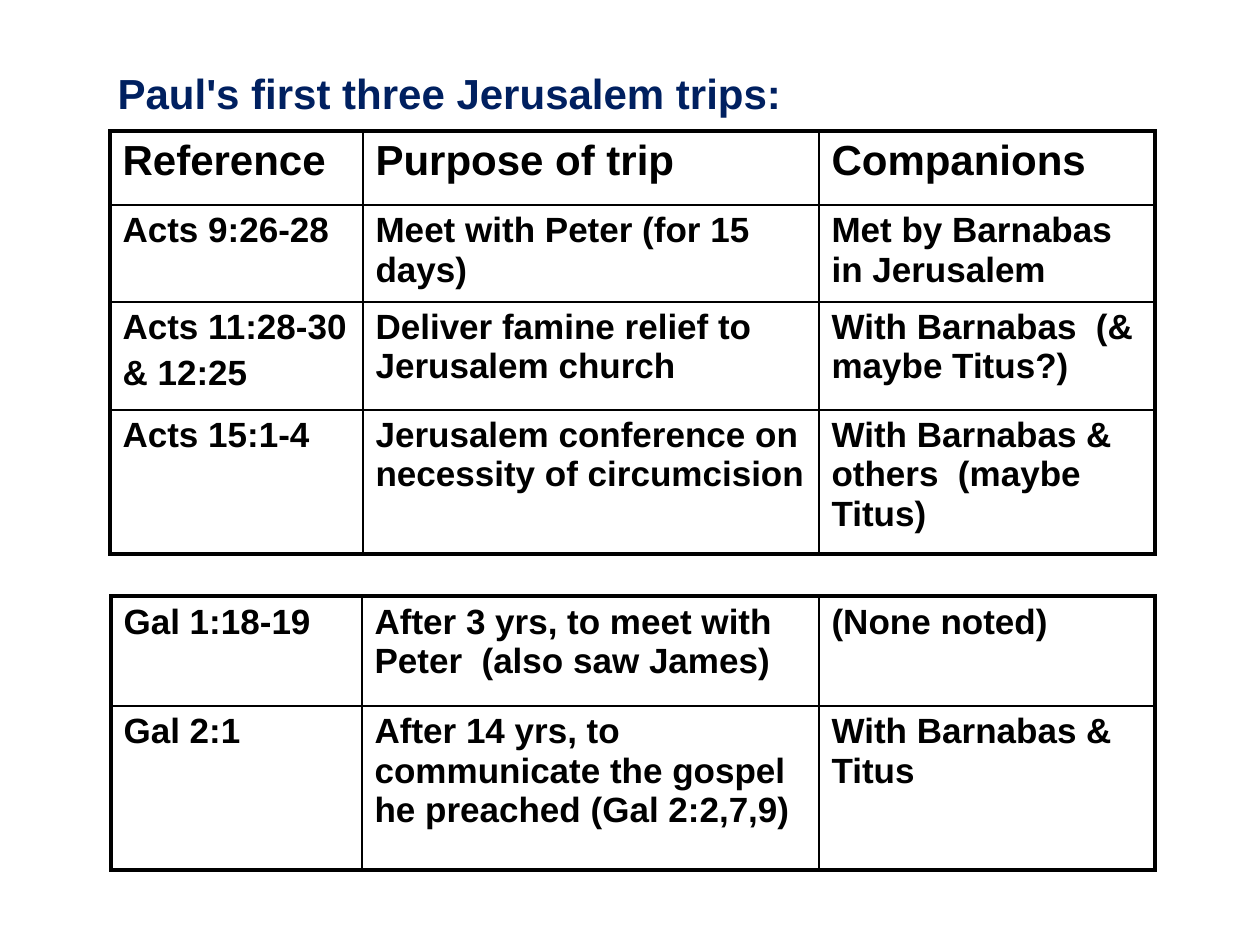
from lxml.etree import SubElement
from pptx import Presentation
from pptx.dml.color import RGBColor
from pptx.enum.text import MSO_ANCHOR, MSO_AUTO_SIZE, PP_ALIGN
from pptx.oxml.ns import qn
from pptx.util import Emu, Pt

EMU_PER_INCH = 914400
PX_PER_INCH = 126
THICK, THIN = 2.25, 1
INK, NAVY = "000000", "002060"

ACTS_TRIPS = [
    ["Reference", "Purpose of trip", "Companions"],
    ["Acts 9:26-28", "Meet with Peter (for 15 days)", "Met by Barnabas in Jerusalem"],
    ["Acts 11:28-30\n& 12:25", "Deliver famine relief to Jerusalem church",
     "With Barnabas  (& maybe Titus?)"],
    ["Acts 15:1-4", "Jerusalem conference on necessity of circumcision",
     "With Barnabas & others  (maybe Titus)"],
]
GALATIANS_TRIPS = [
    ["Gal 1:18-19", "After 3 yrs, to meet with Peter  (also saw James)", "(None noted)"],
    ["Gal 2:1", "After 14 yrs, to communicate the gospel he preached (Gal 2:2,7,9)",
     "With Barnabas & Titus"],
]


def px(length):
    return Emu(round(length * EMU_PER_INCH / PX_PER_INCH))


def color(value):
    return RGBColor.from_string(value)


def format_text(frame, size, ink):
    for index, para in enumerate(frame.paragraphs):
        para.alignment = PP_ALIGN.LEFT
        para.space_before = Pt(size * 0.2 if index else 0)
        for span in para.runs:
            span.font.name = "Arial"
            span.font.size = Pt(size)
            span.font.bold = True
            span.font.color.rgb = color(ink)


def add_title(page, text):
    title = page.shapes.title
    title.left, title.top, title.width, title.height = px(105), px(61), px(695), px(63)
    frame = title.text_frame
    frame.text = text
    frame.word_wrap = False
    frame.auto_size = MSO_AUTO_SIZE.SHAPE_TO_FIT_TEXT
    frame.vertical_anchor = MSO_ANCHOR.TOP
    format_text(frame, 24, NAVY)


def set_borders(cell, widths):
    properties = cell._tc.get_or_add_tcPr()
    for side, width in widths.items():
        line = SubElement(properties, qn(f"a:ln{side}"), w=str(Pt(width)))
        fill = SubElement(line, qn("a:solidFill"))
        SubElement(fill, qn("a:srgbClr"), val=INK)


def add_trip_table(page, left, top, column_widths, row_heights, trips, has_header=False):
    frame = page.shapes.add_table(
        len(row_heights), len(column_widths), px(left), px(top),
        px(sum(column_widths)), px(sum(row_heights)))
    table = frame.table
    table.first_row = has_header
    table.horz_banding = False
    for column, width in zip(table.columns, column_widths):
        column.width = px(width)
    for row, height in zip(table.rows, row_heights):
        row.height = px(height)
    last_row, last_column = len(row_heights) - 1, len(column_widths) - 1
    for r, trip in enumerate(trips):
        for c, text in enumerate(trip):
            cell = table.cell(r, c)
            cell.text_frame.text = text
            format_text(cell.text_frame, 24 if has_header and r == 0 else 20, INK)
            set_borders(cell, {
                "L": THICK if c == 0 else THIN,
                "R": THICK if c == last_column else THIN,
                "T": THICK if r == 0 else THIN,
                "B": THICK if r == last_row else THIN,
            })
            cell.fill.background()


def main():
    deck = Presentation()
    deck.slide_width, deck.slide_height = px(1260), px(945)
    page = deck.slides.add_slide(deck.slide_layouts.get_by_name("Title Only"))
    add_title(page, "Paul's first three Jerusalem trips:")
    add_trip_table(page, 110, 131, [253, 456, 336], [74, 97, 108, 144], ACTS_TRIPS, True)
    add_trip_table(page, 111, 596, [251, 457, 336], [110, 164], GALATIANS_TRIPS)
    deck.save("out.pptx")


if __name__ == "__main__":
    main()
